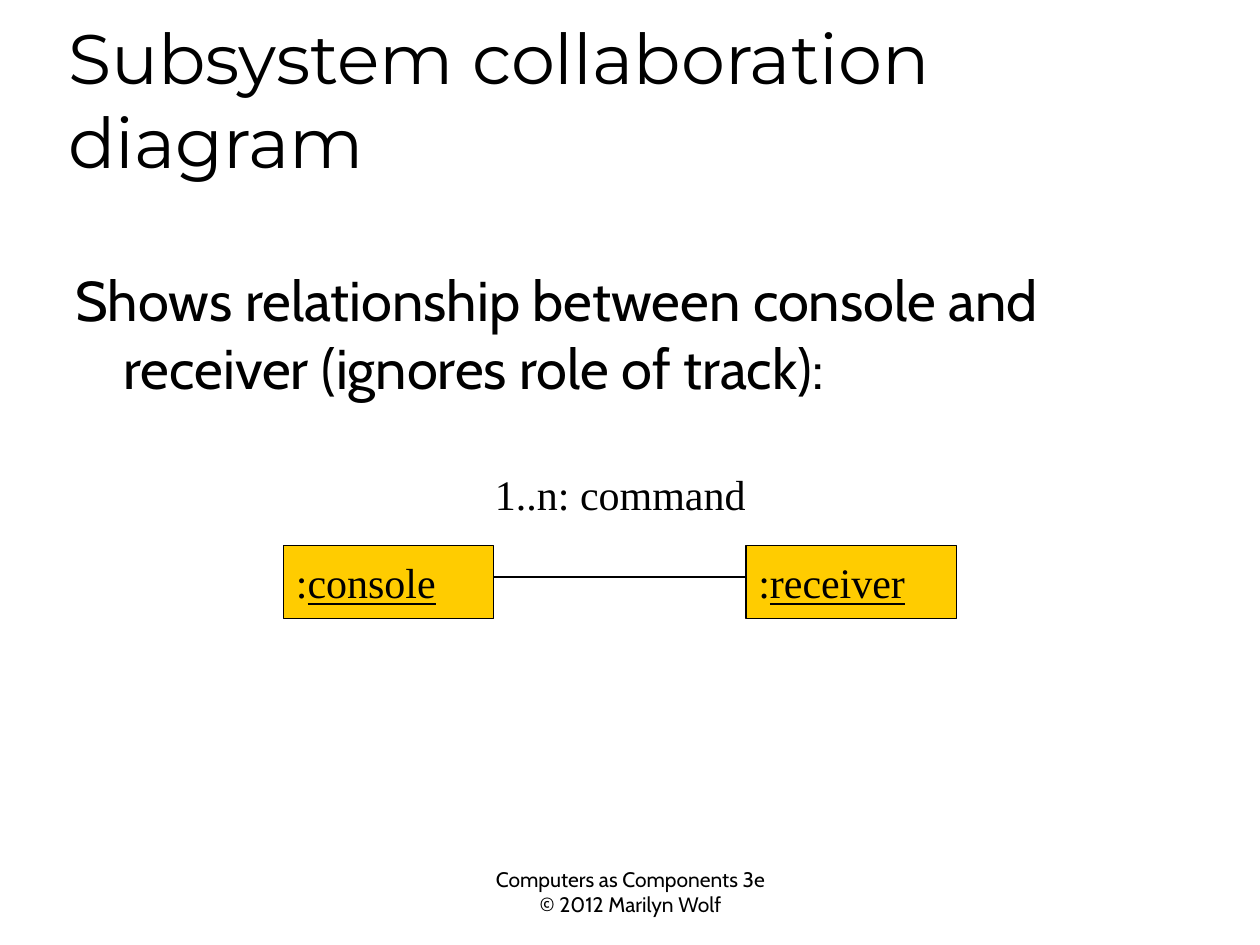
from dataclasses import dataclass

from lxml import etree
from pptx import Presentation
from pptx.dml.color import RGBColor
from pptx.enum.shapes import MSO_CONNECTOR, MSO_SHAPE
from pptx.enum.text import MSO_ANCHOR, MSO_AUTO_SIZE, PP_ALIGN
from pptx.oxml.ns import qn
from pptx.util import Inches, Pt

RECT = MSO_SHAPE.RECTANGLE
STRAIGHT = MSO_CONNECTOR.STRAIGHT
TOP, MIDDLE, BOTTOM = MSO_ANCHOR.TOP, MSO_ANCHOR.MIDDLE, MSO_ANCHOR.BOTTOM
LEFT, CENTER = PP_ALIGN.LEFT, PP_ALIGN.CENTER
NO_FIT = MSO_AUTO_SIZE.NONE


@dataclass(frozen=True)
class Theme:
    ink: RGBColor = RGBColor(0, 0, 0)
    box: RGBColor = RGBColor(0xFF, 0xCC, 0)
    title_font: str = "Montserrat"
    body_font: str = "Cabin"
    diagram_font: str = "Times New Roman"
    title_size: int = 40
    body_size: int = 32
    diagram_size: int = 24
    footer_size: int = 12
    line_width: float = 0.75


THEME = Theme()


def place(sp, left, top, width, height):
    sp.left, sp.top = Inches(left), Inches(top)
    sp.width, sp.height = Inches(width), Inches(height)


def format_text(tf, font, size, align=LEFT, anchor=TOP, wrap=True):
    tf.word_wrap = wrap
    tf.auto_size = NO_FIT
    tf.vertical_anchor = anchor
    for p in tf.paragraphs:
        p.alignment = align
        for r in p.runs:
            r.font.name = font
            r.font.size = Pt(size)
            r.font.color.rgb = THEME.ink


def style_line(line):
    line.color.rgb = THEME.ink
    line.width = Pt(THEME.line_width)


def add_title(slide, text):
    sp = slide.shapes.title
    place(sp, 0.44, 0.25, 8.5, 1.25)
    sp.text_frame.text = text
    format_text(sp.text_frame, THEME.title_font, THEME.title_size, anchor=BOTTOM)


def add_body(slide, text):
    sp = slide.placeholders[1]
    place(sp, 0.5, 2.06, 8.94, 1.19)
    tf = sp.text_frame
    tf.text = text
    p = tf.paragraphs[0]
    # Hanging indent without a bullet
    pPr = p._p.get_or_add_pPr()
    pPr.set("marL", str(Inches(0.38)))
    pPr.set("indent", str(Inches(-0.38)))
    etree.SubElement(pPr, qn("a:buNone"))
    p.space_before = Pt(0)
    format_text(tf, THEME.body_font, THEME.body_size)


def add_label(slide, text, box, font, size, align=LEFT, wrap=True):
    sp = slide.shapes.add_textbox(*map(Inches, box))
    sp.text_frame.text = text
    format_text(sp.text_frame, font, size, align, wrap=wrap)


def add_object(slide, name, left, top, width, height):
    sp = slide.shapes.add_shape(RECT, *map(Inches, (left, top, width, height)))
    sp.shadow.inherit = False
    sp.fill.solid()
    sp.fill.fore_color.rgb = THEME.box
    style_line(sp.line)
    p = sp.text_frame.paragraphs[0]
    p.add_run().text = ":"
    r = p.add_run()
    r.text = name
    r.font.underline = True
    format_text(sp.text_frame, THEME.diagram_font, THEME.diagram_size,
                anchor=MIDDLE, wrap=False)


def add_link(slide, x1, x2, y):
    line = slide.shapes.add_connector(
        STRAIGHT, Inches(x1), Inches(y), Inches(x2), Inches(y))
    style_line(line.line)
    etree.SubElement(line._element.spPr, qn("a:effectLst"))


def main():
    prs = Presentation()
    prs.slide_width, prs.slide_height = Inches(10), Inches(7.5)
    slide = prs.slides.add_slide(prs.slide_layouts[1])

    # Footer
    add_label(slide, "Computers as Components 3e\n© 2012 Marilyn Wolf",
              (3.67, 6.83, 2.67, 0.5), THEME.body_font, THEME.footer_size, CENTER)

    # Title and statement
    add_title(slide, "Subsystem collaboration diagram")
    add_body(slide, "Shows relationship between console and receiver "
                    "(ignores role of track):")

    # Collaboration diagram
    left, top, width, height, gap = 2.25, 4.33, 1.67, 0.58, 2
    for i, name in enumerate(("console", "receiver")):
        add_object(slide, name, left + i * (width + gap), top, width, height)
    add_link(slide, left + width, left + width + gap, top + 0.25)
    add_label(slide, "1..n: command", (3.83, 3.67, 2.19, 0.5),
              THEME.diagram_font, THEME.diagram_size, wrap=False)

    prs.save("out.pptx")


if __name__ == "__main__":
    main()
